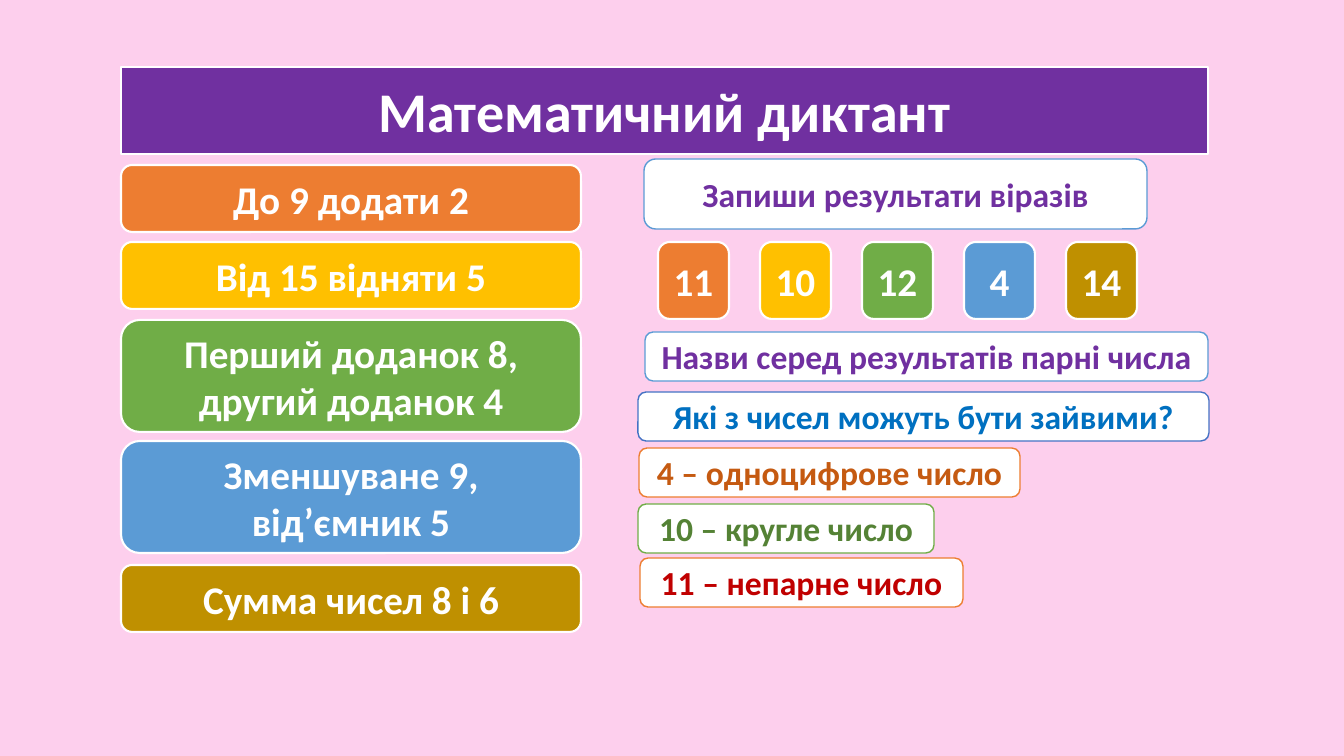
from dataclasses import dataclass

from pptx import Presentation
from pptx import util as u
from pptx.dml.color import RGBColor
from pptx.enum import shapes, text

PX = 914400 / 100.8


@dataclass(frozen=True)
class Theme:
    font: str = "Calibri"
    title_size: int = 40
    task_size: int = 28
    note_size: int = 24
    background: str = "FDCFED"
    white: str = "FFFFFF"
    purple: str = "7030A0"
    orange: str = "ED7D31"
    yellow: str = "FFC000"
    green: str = "70AD47"
    blue: str = "5B9BD5"
    gold: str = "BF9000"
    royal_blue: str = "4472C4"
    bright_blue: str = "0070C0"
    dark_orange: str = "C55A11"
    dark_green: str = "548235"
    red: str = "C00000"


THEME = Theme()

# task, answer, colour, top, height
TASKS = [
    ("До 9 додати 2", "11", THEME.orange, 165, 67),
    ("Від 15 відняти 5", "10", THEME.yellow, 242, 67),
    ("Перший доданок 8, другий доданок 4", "12", THEME.green, 320, 112),
    ("Зменшуване 9, від’ємник 5", "4", THEME.blue, 441, 112),
    ("Сумма чисел 8 і 6", "14", THEME.gold, 565, 67),
]

# wording, text colour, outline, (left, top, width, height)
NOTES = [
    ("Запиши результати віразів", THEME.purple, THEME.blue, (644, 159, 503, 70)),
    ("Назви серед результатів парні числа", THEME.purple, THEME.blue, (645, 332, 563, 49)),
    ("Які з чисел можуть бути зайвими?", THEME.bright_blue, THEME.royal_blue, (638, 392, 571, 49)),
    ("4 – одноцифрове число", THEME.dark_orange, THEME.orange, (639, 448, 381, 49)),
    ("10 – кругле число", THEME.dark_green, THEME.green, (638, 504, 296, 49)),
    ("11 – непарне число", THEME.red, THEME.orange, (640, 558, 323, 49)),
]


def px(length):
    return u.Emu(round(length * PX))


def colour(value):
    return RGBColor.from_string(value)


def style_box(shape, wording, size, text_colour, fill, outline, weight):
    shape.fill.solid()
    shape.fill.fore_color.rgb = colour(fill)
    shape.line.color.rgb = colour(outline)
    shape.line.width = u.Pt(weight)
    frame = shape.text_frame
    frame.text = wording
    frame.word_wrap = True
    frame.auto_size = text.MSO_AUTO_SIZE.NONE
    frame.vertical_anchor = text.MSO_ANCHOR.MIDDLE
    paragraph = frame.paragraphs[0]
    paragraph.alignment = text.PP_ALIGN.CENTER
    paragraph.line_spacing = 1.0
    font = paragraph.runs[0].font
    font.name = THEME.font
    font.size = u.Pt(size)
    font.bold = True
    font.color.rgb = colour(text_colour)


def set_title(slide, wording, box):
    title = slide.shapes.title
    title.left, title.top, title.width, title.height = map(px, box)
    style_box(title, wording, THEME.title_size, THEME.white, THEME.purple, THEME.white, 1.5)


def add_rounded_box(slide, box):
    shape = slide.shapes.add_shape(shapes.MSO_SHAPE.ROUNDED_RECTANGLE, *map(px, box))
    shape.shadow.inherit = False
    return shape


def add_tile(slide, wording, fill, box):
    """Add a coloured box with white text."""
    style_box(add_rounded_box(slide, box), wording, THEME.task_size,
              THEME.white, fill, THEME.white, 1.5)


def add_note(slide, wording, text_colour, outline, box):
    """Add a white box with coloured text and outline."""
    style_box(add_rounded_box(slide, box), wording, THEME.note_size,
              text_colour, THEME.white, outline, 1)


def main():
    presentation = Presentation()
    presentation.slide_width = px(1344)
    presentation.slide_height = px(756)
    slide = presentation.slides.add_slide(presentation.slide_layouts.get_by_name("Title Only"))
    slide.background.fill.solid()
    slide.background.fill.fore_color.rgb = colour(THEME.background)

    set_title(slide, "Математичний диктант", (121, 67, 1087, 87))
    for index, (task, answer, fill, top, height) in enumerate(TASKS):
        add_tile(slide, task, fill, (121, top, 460, height))
        add_tile(slide, answer, fill, (658 + 102 * index, 242, 71, 77))
    for note in NOTES:
        add_note(slide, *note)

    presentation.save("out.pptx")


if __name__ == "__main__":
    main()
